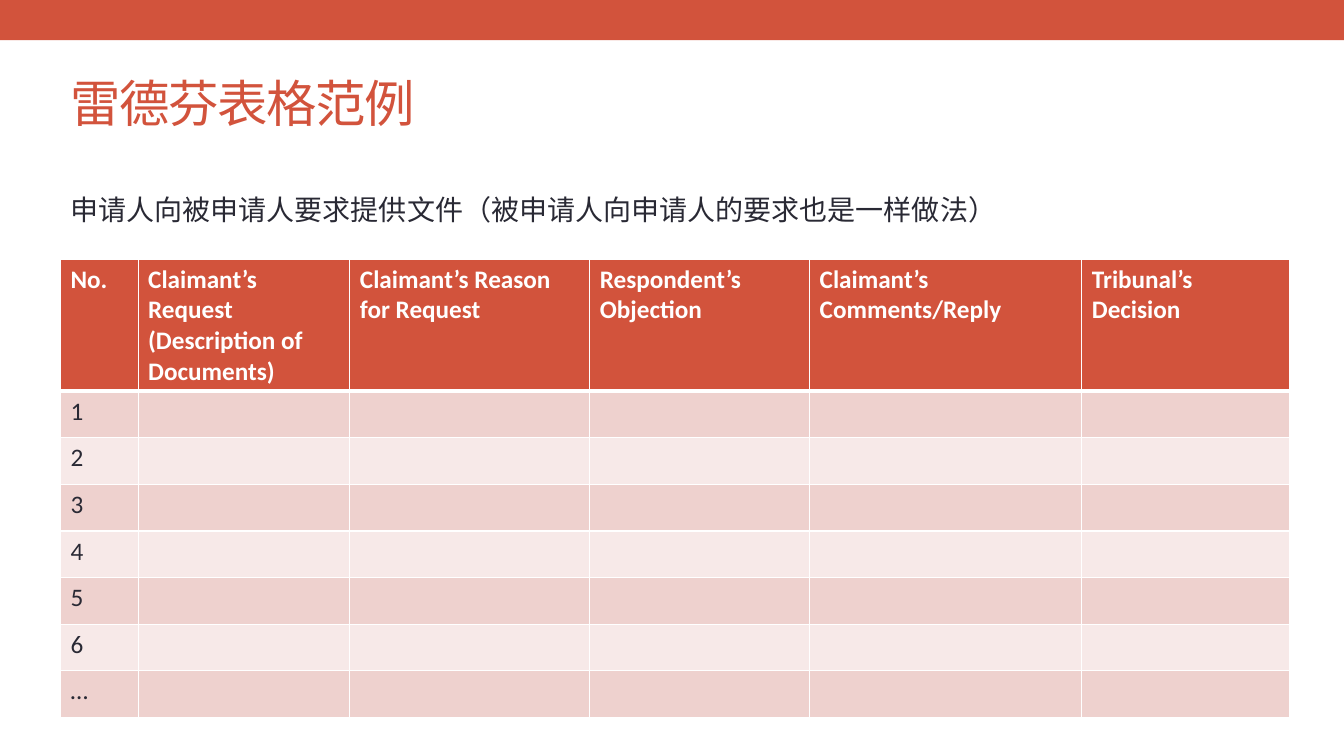
import dataclasses

import pptx
import pptx.dml.color
import pptx.enum.shapes
import pptx.enum.text
import pptx.oxml
import pptx.oxml.ns
import pptx.util
from lxml import etree

Inches = pptx.util.Inches


@dataclasses.dataclass(frozen=True)
class Theme:
    accent: str = "D2533C"
    ink: str = "292934"
    white: str = "FFFFFF"
    bands: tuple = ("EED1CE", "F7E9E8")
    title_size: int = 36
    lead_size: int = 20
    table_size: int = 18
    chinese_font: str = "Noto Sans CJK SC"
    lead_font: str = "Vollkorn"
    table_font: str = "Calibri"
    rule: int = 1
    header_rule: int = 3


THEME = Theme()
COLUMNS = [
    ("No.", 0.77),
    ("Claimant’s Request\n(Description of Documents)", 2.1),
    ("Claimant’s Reason for Request", 2.38),
    ("Respondent’s Objection", 2.18),
    ("Claimant’s Comments/Reply", 2.7),
    ("Tribunal’s Decision", 2.06),
]
ROW_LABELS = ["1", "2", "3", "4", "5", "6", "…"]
HEADER_HEIGHT = 1.31


def rgb(value):
    return pptx.dml.color.RGBColor.from_string(value)


def write(frame, text, size, font, color, bold=False):
    frame.text = text
    for paragraph in frame.paragraphs:
        for run in paragraph.runs:
            run.font.size = pptx.util.Pt(size)
            run.font.name = font
            run.font.bold = bold
            run.font.color.rgb = rgb(color)


def add_banner(slide, left, top, width, height):
    banner = slide.shapes.add_shape(
        pptx.enum.shapes.MSO_SHAPE.RECTANGLE,
        Inches(left), Inches(top), Inches(width), Inches(height))
    banner.shadow.inherit = False
    banner.fill.solid()
    banner.fill.fore_color.rgb = rgb(THEME.accent)
    banner.line.fill.background()


def add_line_of_text(slide, left, top, width, height, text, size, font, color, spacing=0):
    line = slide.shapes.add_textbox(
        Inches(left), Inches(top), Inches(width), Inches(height))
    frame = line.text_frame
    frame.word_wrap = True
    frame.vertical_anchor = pptx.enum.text.MSO_ANCHOR.MIDDLE
    write(frame, text, size, font, color)
    properties = frame.paragraphs[0].runs[0].font._element
    properties.set("spc", str(spacing * 100))
    east_asian = etree.SubElement(properties, pptx.oxml.ns.qn("a:ea"))
    east_asian.set("typeface", THEME.chinese_font)


def style_cell(cell, fill, top_rule, bottom_rule):
    properties = cell._tc.get_or_add_tcPr()
    rules = {"L": THEME.rule, "R": THEME.rule, "T": top_rule, "B": bottom_rule}
    for side, weight in rules.items():
        properties.append(pptx.oxml.parse_xml(
            f'<a:ln{side} {pptx.oxml.ns.nsdecls("a")} w="{pptx.util.Pt(weight)}">'
            f'<a:solidFill><a:srgbClr val="{THEME.white}"/></a:solidFill>'
            f'</a:ln{side}>'))
    cell.fill.solid()
    cell.fill.fore_color.rgb = rgb(fill)


def add_request_table(slide, left, top, width, height):
    row_count = len(ROW_LABELS) + 1
    table = slide.shapes.add_table(
        row_count, len(COLUMNS),
        Inches(left), Inches(top), Inches(width), Inches(height)).table
    body_height = (height - HEADER_HEIGHT) / len(ROW_LABELS)
    for index, row in enumerate(table.rows):
        row.height = Inches(body_height if index else HEADER_HEIGHT)
        fill = THEME.bands[(index - 1) % 2] if index else THEME.accent
        top_rule = THEME.header_rule if index == 1 else THEME.rule
        bottom_rule = THEME.rule if index else THEME.header_rule
        for cell in row.cells:
            style_cell(cell, fill, top_rule, bottom_rule)
    for index, (heading, column_width) in enumerate(COLUMNS):
        table.columns[index].width = Inches(column_width)
        write(table.cell(0, index).text_frame, heading,
              THEME.table_size, THEME.table_font, THEME.white, bold=True)
    for index, label in enumerate(ROW_LABELS, start=1):
        write(table.cell(index, 0).text_frame, label,
              THEME.table_size, THEME.table_font, THEME.ink)


def main():
    deck = pptx.Presentation()
    deck.slide_width, deck.slide_height = Inches(13.33), Inches(7.5)
    slide = deck.slides.add_slide(deck.slide_layouts[6])
    add_banner(slide, 0, 0, 13.33, 0.4)
    add_line_of_text(slide, 0.6, 0.45, 9.98, 1.14, "雷德芬表格范例",
                     THEME.title_size, THEME.chinese_font, THEME.accent, spacing=-1)
    add_request_table(slide, 0.6, 2.57, 12.18, 4.55)
    add_line_of_text(slide, 0.6, 1.86, 10.65, 0.44,
                     "申请人向被申请人要求提供文件（被申请人向申请人的要求也是一样做法）",
                     THEME.lead_size, THEME.lead_font, THEME.ink)
    deck.save("out.pptx")


if __name__ == "__main__":
    main()
